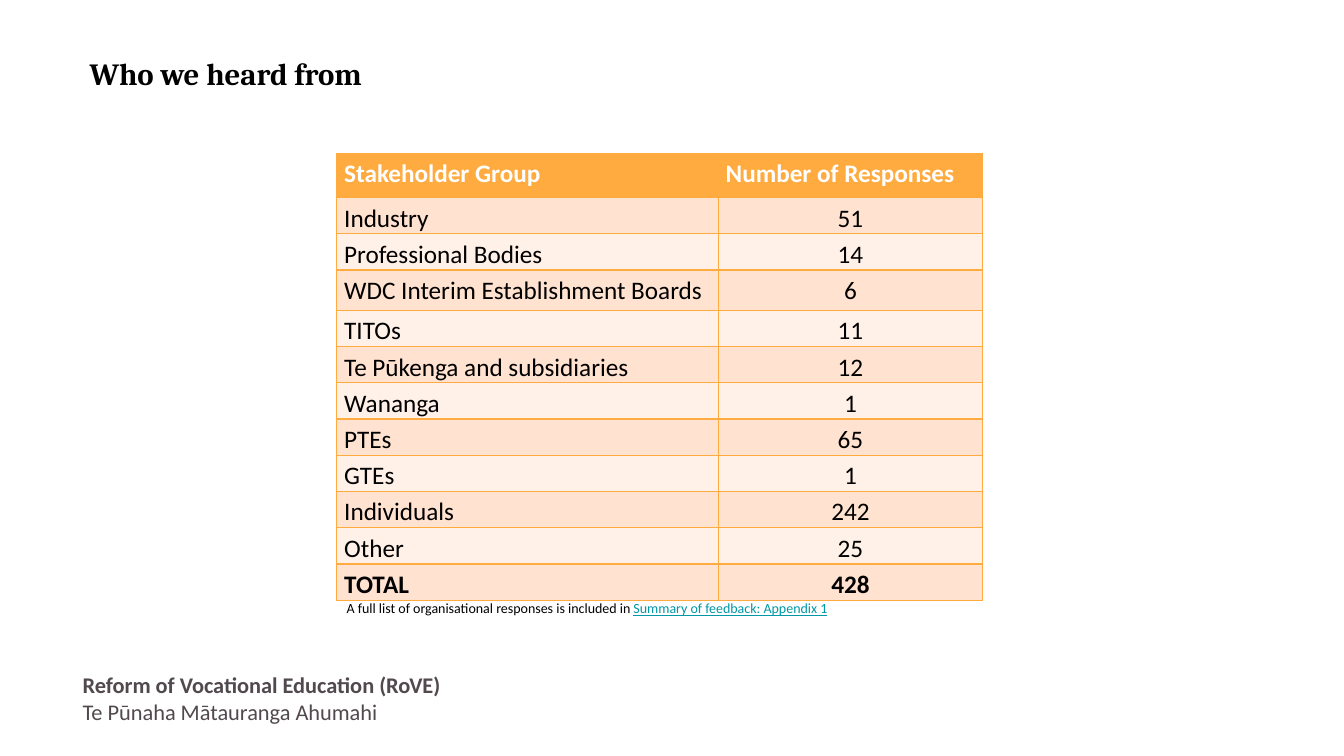
from lxml import etree
from pptx import Presentation
from pptx import util as u
from pptx.dml.color import RGBColor
from pptx.enum import text
from pptx.oxml import ns

BLACK = RGBColor(0x00, 0x00, 0x00)
WHITE = RGBColor(0xFF, 0xFF, 0xFF)
GREY = RGBColor(0x51, 0x49, 0x4E)
TEAL = RGBColor(0x00, 0x97, 0xA7)
ORANGE = RGBColor(0xFF, 0xAB, 0x40)
PEACH = RGBColor(0xFF, 0xE2, 0xCF)
CREAM = RGBColor(0xFF, 0xF1, 0xE8)

HEADINGS = ("Stakeholder Group", "Number of Responses")
RESPONSES = [
    ("Industry", 51),
    ("Professional Bodies", 14),
    ("WDC Interim Establishment Boards", 6),
    ("TITOs", 11),
    ("Te Pūkenga and subsidiaries", 12),
    ("Wananga", 1),
    ("PTEs", 65),
    ("GTEs", 1),
    ("Individuals", 242),
    ("Other", 25),
    ("TOTAL", 428),
]
COLUMN_WIDTHS = (272.5, 189)
HEADER_HEIGHT, ROW_HEIGHT, TALL_ROW_HEIGHT = 31.7, 25.9, 28.8
TALL_ROW = 3


class SlideWriter:
    body_font = "Calibri"
    title_font = "Cambria"

    def __init__(self, page):
        self.page = page

    def span(self, para, words, size, color, bold=False, underline=False, font=None):
        span = para.add_run()
        span.text = words
        span.font.name = font or self.body_font
        span.font.size = u.Pt(size)
        span.font.color.rgb = color
        span.font.bold = bold
        span.font.underline = underline

    def text_box(self, left, top, width, height, inset_x, inset_y):
        """Add a wrapping text box and return its text frame."""
        box = self.page.shapes.add_textbox(*map(u.Pt, (left, top, width, height)))
        frame = box.text_frame
        frame.word_wrap = True
        frame.margin_left = frame.margin_right = u.Pt(inset_x)
        frame.margin_top = frame.margin_bottom = u.Pt(inset_y)
        return frame

    def title(self, words):
        frame = self.text_box(56.9, 35.3, 815, 39.6, 7.2, 7.2)
        frame.vertical_anchor = text.MSO_ANCHOR.MIDDLE
        para = frame.paragraphs[0]
        para.line_spacing = 0.75
        self.span(para, words, 22, BLACK, bold=True, font=self.title_font)

    def footer(self, programme, translation):
        frame = self.text_box(59, 479.5, 502, 44.6, 0, 0)
        self.span(frame.paragraphs[0], programme, 16, GREY, bold=True)
        self.span(frame.add_paragraph(), translation, 16, GREY)

    def note(self, words, reference):
        frame = self.text_box(240.5, 424.8, 542, 19.4, 7.2, 3.6)
        para = frame.paragraphs[0]
        self.span(para, words, 10, BLACK)
        self.span(para, reference, 10, TEAL, underline=True)

    def borders(self, cell):
        properties = cell._tc.get_or_add_tcPr()
        for side in ("lnL", "lnR", "lnT", "lnB"):
            line = etree.SubElement(properties, ns.qn(f"a:{side}"), w=str(u.Pt(1)))
            fill = etree.SubElement(line, ns.qn("a:solidFill"))
            etree.SubElement(fill, ns.qn("a:srgbClr"), val=str(ORANGE))

    def cell(self, cell, words, fill, color, bold, centred):
        self.borders(cell)
        cell.fill.solid()
        cell.fill.fore_color.rgb = fill
        cell.margin_left = cell.margin_right = u.Pt(5.4)
        cell.margin_top = cell.margin_bottom = 0
        para = cell.text_frame.paragraphs[0]
        para.line_spacing = 1.18
        para.alignment = text.PP_ALIGN.CENTER if centred else text.PP_ALIGN.LEFT
        self.span(para, words, 18, color, bold)

    def response_table(self, left, top):
        rows = [HEADINGS, *RESPONSES]
        heights = [HEADER_HEIGHT] + [ROW_HEIGHT] * len(RESPONSES)
        heights[TALL_ROW] = TALL_ROW_HEIGHT
        size = (sum(COLUMN_WIDTHS), sum(heights))
        table = self.page.shapes.add_table(
            len(rows), len(COLUMN_WIDTHS), *map(u.Pt, (left, top, *size))
        ).table
        table.horz_banding = False
        for column, width in zip(table.columns, COLUMN_WIDTHS):
            column.width = u.Pt(width)
        for r, (values, height) in enumerate(zip(rows, heights)):
            table.rows[r].height = u.Pt(height)
            header = r == 0
            fill = ORANGE if header else (CREAM, PEACH)[r % 2]
            color = WHITE if header else BLACK
            bold = header or values is rows[-1]
            for c, value in enumerate(values):
                centred = c == 1 and not header
                self.cell(table.cell(r, c), str(value), fill, color, bold, centred)


def main():
    deck = Presentation()
    deck.slide_width, deck.slide_height = u.Pt(960), u.Pt(540)
    writer = SlideWriter(deck.slides.add_slide(deck.slide_layouts[6]))
    writer.footer("Reform of Vocational Education (RoVE)", "Te Pūnaha Mātauranga Ahumahi")
    writer.title("Who we heard from")
    writer.response_table(240.5, 109.4)
    writer.note(
        "A full list of organisational responses is included in ",
        "Summary of feedback: Appendix 1",
    )
    deck.save("out.pptx")


if __name__ == "__main__":
    main()
